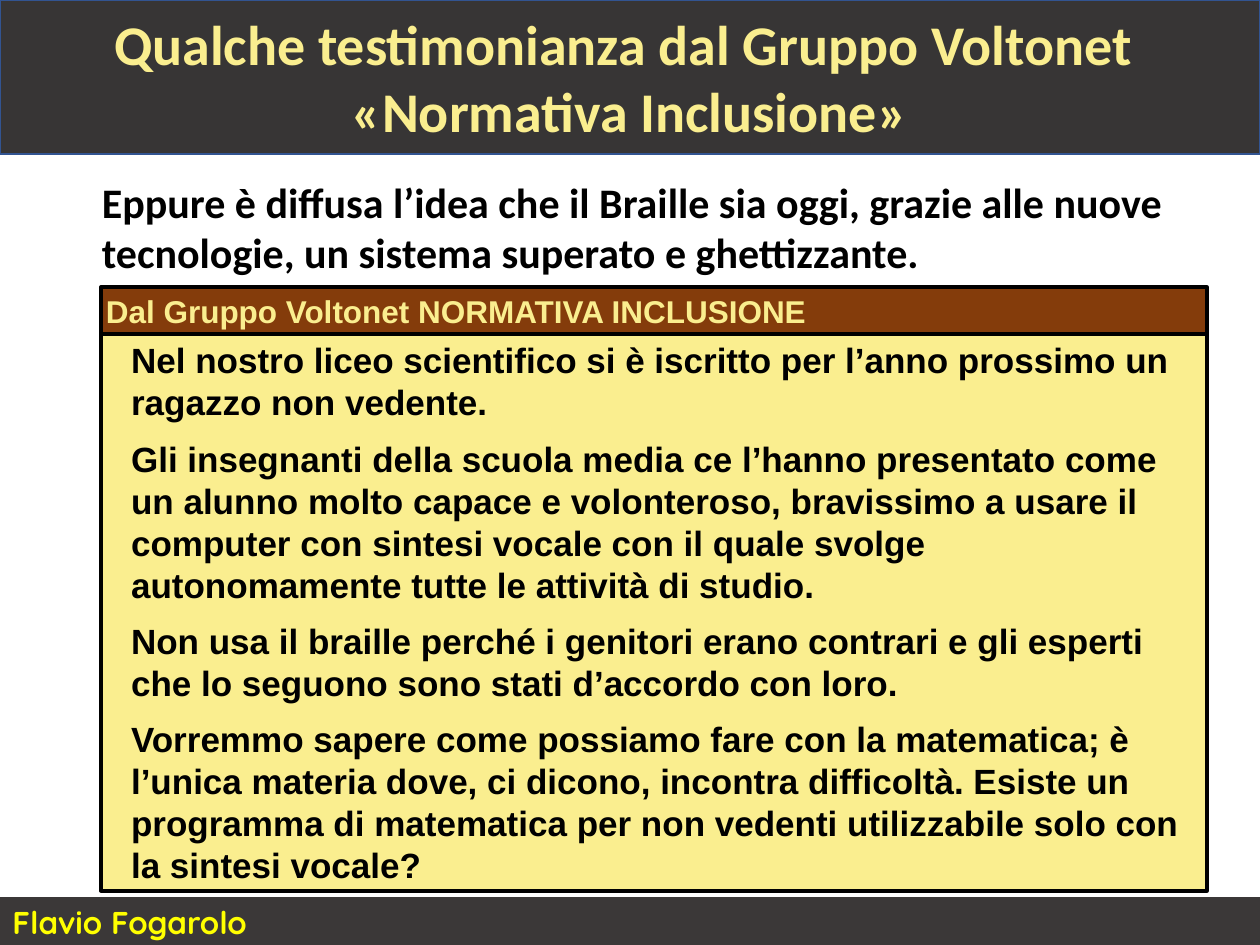
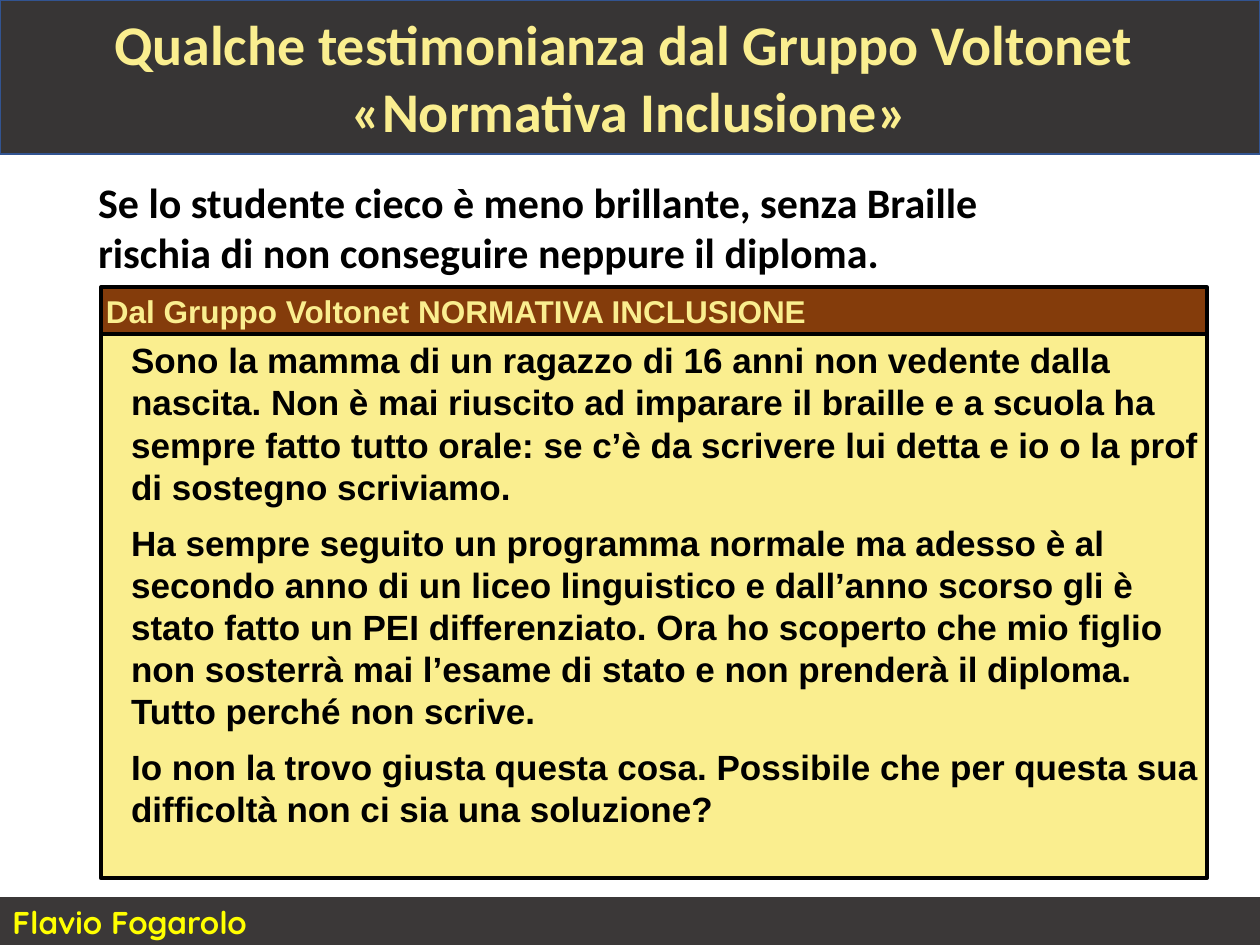
from dataclasses import dataclass
from pptx import Presentation
from pptx.dml.color import RGBColor
from pptx.enum.shapes import MSO_SHAPE
from pptx.enum.text import MSO_ANCHOR, MSO_AUTO_SIZE, PP_ALIGN
from pptx.oxml.ns import qn
from pptx.util import Inches, Pt


# Colours, fonts and type sizes
@dataclass(frozen=True)
class Theme:
    band: str = "373535"
    band_line: str = "325491"
    footer: str = "3B3838"
    footer_text: str = "FFFF00"
    cream: str = "FAEE8F"
    brown: str = "843C0B"
    black: str = "000000"
    heading_font: str = "Calibri"
    quote_font: str = "Arial"
    footer_font: str = "Quicksand"
    title_size: int = 32
    intro_size: int = 24
    quote_size: int = 20
    label_size: int = 18


# Wording
TITLE = "Qualche testimonianza dal Gruppo Voltonet \v«Normativa Inclusione»"
SOURCE = "Dal Gruppo Voltonet NORMATIVA INCLUSIONE"
AUTHOR = "Flavio Fogarolo"

TESTIMONIES = [
    {
        "intro": "Eppure è diffusa l’idea che il Braille sia oggi, grazie alle nuove "
                 "tecnologie, un sistema superato e ghettizzante.",
        "intro_left": 0.71, "intro_width": 8.62, "quote_height": 4.42,
        "quote": [
            "Nel nostro liceo scientifico si è iscritto per l’anno prossimo un ragazzo "
            "non vedente.",
            "Gli insegnanti della scuola media ce l’hanno presentato come un alunno molto "
            "capace e volonteroso, bravissimo a usare il computer con sintesi vocale con il "
            "quale svolge autonomamente tutte le attività di studio.",
            "Non usa il braille perché i genitori erano contrari e gli esperti che lo "
            "seguono sono stati d’accordo con loro.",
            "Vorremmo sapere come possiamo fare con la matematica; è l’unica materia dove, "
            "ci dicono, incontra difficoltà. Esiste un programma di matematica per non "
            "vedenti utilizzabile solo con la sintesi vocale?",
        ],
    },
    {
        "intro": "Se lo studente cieco è meno brillante, senza Braille rischia di non "
                 "conseguire neppure il diploma.",
        "intro_left": 0.68, "intro_width": 7.72, "quote_height": 4.32,
        "quote": [
            "Sono la mamma di un ragazzo di 16 anni non vedente dalla nascita. Non è mai "
            "riuscito ad imparare il braille e a scuola ha sempre fatto tutto orale: se c’è "
            "da scrivere lui detta e io o la prof di sostegno scriviamo.",
            "Ha sempre seguito un programma normale ma adesso è al secondo anno di un liceo "
            "linguistico e dall’anno scorso gli è stato fatto un PEI differenziato. Ora ho "
            "scoperto che mio figlio non sosterrà mai l’esame di stato e non prenderà il "
            "diploma. Tutto perché non scrive.",
            "Io non la trovo giusta questa cosa. Possibile che per questa sua difficoltà "
            "non ci sia una soluzione?",
        ],
    },
]

# Quote card geometry, in inches
CARD_LEFT, CARD_TOP, CARD_WIDTH, LABEL_HEIGHT = 0.8, 2.28, 8.78, 0.37


class SlideBuilder:
    def __init__(self, deck, theme):
        self.deck = deck
        self.theme = theme
        self.page = None

    def new_page(self):
        self.page = self.deck.slides.add_slide(self.deck.slide_layouts[1])

    def place(self, box, left, top, width, height):
        box.left, box.top = Inches(left), Inches(top)
        box.width, box.height = Inches(width), Inches(height)

    def paint(self, box, fill, line=None, weight=2):
        box.fill.solid()
        box.fill.fore_color.rgb = RGBColor.from_string(fill)
        if line:
            box.line.color.rgb = RGBColor.from_string(line)
            box.line.width = Pt(weight)
        else:
            box.line.fill.background()

    def set_text(self, box, text, font, size, color, align=PP_ALIGN.LEFT,
                 anchor=MSO_ANCHOR.TOP, inset=None, after=0, spacing=1.0, indent=0):
        frame = box.text_frame
        frame.text = text
        frame.word_wrap = True
        frame.auto_size = MSO_AUTO_SIZE.NONE
        frame.vertical_anchor = anchor
        if inset is not None:
            frame.margin_left = frame.margin_right = Inches(inset)
            frame.margin_top = frame.margin_bottom = Inches(inset)
        for para in frame.paragraphs:
            para.alignment = align
            para.space_before = Pt(0)
            para.space_after = Pt(after)
            para.line_spacing = spacing
            # Plain paragraphs: a left indent and no bullet
            properties = para._p.get_or_add_pPr()
            properties.set("marL", str(Inches(indent)))
            properties.set("indent", "0")
            properties.append(properties.makeelement(qn("a:buNone"), {}))
            for span in para.runs:
                span.font.name = font
                span.font.size = Pt(size)
                span.font.bold = True
                span.font.color.rgb = RGBColor.from_string(color)

    def rectangle(self, left, top, width, height, fill, line=None):
        box = self.page.shapes.add_shape(
            MSO_SHAPE.RECTANGLE, Inches(left), Inches(top), Inches(width), Inches(height))
        box.shadow.inherit = False
        self.paint(box, fill, line)
        return box

    def footer(self, text):
        theme = self.theme
        box = self.rectangle(0, 7.12, 10, 0.4, theme.footer)
        self.set_text(box, text, theme.footer_font, theme.label_size, theme.footer_text)

    def title(self, text):
        theme = self.theme
        box = self.page.shapes.title
        self.place(box, 0, 0, 10, 1.22)
        self.paint(box, theme.band, theme.band_line, 1)
        self.set_text(box, text, theme.heading_font, theme.title_size, theme.cream,
                      align=PP_ALIGN.CENTER, anchor=MSO_ANCHOR.MIDDLE)

    def intro(self, text, left, width):
        theme = self.theme
        box = self.page.shapes.add_textbox(
            Inches(left), Inches(1.35), Inches(width), Inches(0.91))
        self.set_text(box, text, theme.heading_font, theme.intro_size, theme.black, after=8)

    def quote(self, paragraphs, height):
        theme = self.theme
        box = self.page.placeholders[1]
        self.place(box, CARD_LEFT, CARD_TOP + LABEL_HEIGHT, CARD_WIDTH, height)
        self.paint(box, theme.cream, theme.black)
        self.set_text(box, "\n".join(paragraphs), theme.quote_font, theme.quote_size,
                      theme.black, inset=0.04, after=8, spacing=Pt(24), indent=0.2)

    def quote_label(self, text):
        theme = self.theme
        box = self.rectangle(CARD_LEFT, CARD_TOP, CARD_WIDTH, LABEL_HEIGHT,
                             theme.brown, theme.black)
        self.set_text(box, text, theme.quote_font, theme.label_size, theme.cream,
                      inset=0.04, after=8)


def main():
    deck = Presentation()
    deck.slide_width, deck.slide_height = Inches(10), Inches(7.5)
    builder = SlideBuilder(deck, Theme())
    for testimony in TESTIMONIES:
        builder.new_page()
        builder.footer(AUTHOR)
        builder.title(TITLE)
        builder.intro(testimony["intro"], testimony["intro_left"], testimony["intro_width"])
        builder.quote(testimony["quote"], testimony["quote_height"])
        builder.quote_label(SOURCE)
    deck.save("out.pptx")


if __name__ == "__main__":
    main()
